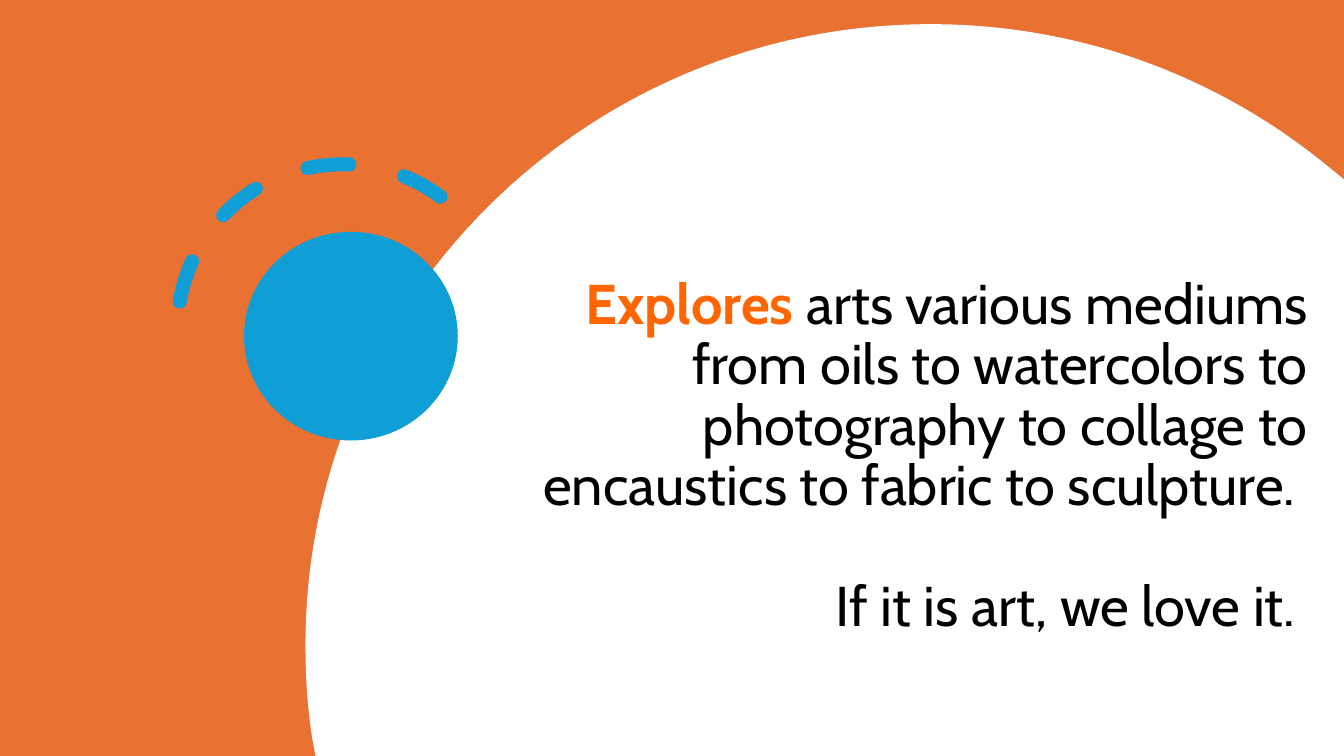
from lxml import etree
from pptx import Presentation
from pptx.dml.color import RGBColor
from pptx.enum.dml import MSO_LINE
from pptx.enum.shapes import MSO_SHAPE
from pptx.enum.text import MSO_ANCHOR, PP_ALIGN
from pptx.oxml.ns import qn
from pptx.util import Inches, Pt

COLORS = {
    "background": "E97132",
    "disc": "FFFFFF",
    "blue": "0F9ED5",
    "accent": "FF6600",
    "text": "000000",
}
WIDTH, HEIGHT = 13.33, 7.5


def rgb(name):
    return RGBColor.from_string(COLORS[name])


def paint(shape, name):
    """Give the shape a flat fill without outline or shadow."""
    shape.shadow.inherit = False
    shape.fill.solid()
    shape.fill.fore_color.rgb = rgb(name)
    shape.line.fill.background()


prs = Presentation()
prs.slide_width, prs.slide_height = Inches(WIDTH), Inches(HEIGHT)
s = prs.slides.add_slide(prs.slide_layouts[5])

background = s.shapes.add_shape(
    MSO_SHAPE.RECTANGLE, 0, 0, prs.slide_width, prs.slide_height)
paint(background, "background")

# Large disc, cut off by the right and bottom edges of the slide.
# A step of three points is a curve, a step of one point is a line.
disc_steps = [
    [(10.73, 0.24), (12.1, 0.77), (13.17, 1.65)],
    [(WIDTH, 1.78)],
    [(WIDTH, HEIGHT)],
    [(3.13, HEIGHT)],
    [(3.1, 7.34)],
    [(3.05, 7.03), (3.03, 6.72), (3.03, 6.4)],
    [(3.03, 3), (5.81, 0.24), (9.23, 0.24)],
]
builder = s.shapes.build_freeform(Inches(9.23), Inches(0.24))
builder.add_line_segments(
    [(Inches(x), Inches(y)) for step in disc_steps for x, y in step], close=True)
disc = builder.convert_to_shape()
paint(disc, "disc")
segments = iter(list(disc._element.iter(qn("a:lnTo"))))
for step in disc_steps:
    parts = [next(segments) for _ in step]
    if len(parts) == 3:
        curve = etree.Element(qn("a:cubicBezTo"))
        parts[0].addprevious(curve)
        for part in parts:
            curve.append(part[0])
            part.getparent().remove(part)

dot = s.shapes.add_shape(
    MSO_SHAPE.OVAL, Inches(2.42), Inches(2.3), Inches(2.12), Inches(2.07))
paint(dot, "blue")

arc = s.shapes.add_shape(
    MSO_SHAPE.ARC, Inches(1.76), Inches(1.63), Inches(3.27), Inches(3.27))
arc.shadow.inherit = False
arc.rotation = 308.7
arc.adjustments[0], arc.adjustments[1] = 144.56, 2.28
arc.fill.background()
arc.line.color.rgb = rgb("blue")
arc.line.width = Pt(10)
arc.line.dash_style = MSO_LINE.DASH
arc.line._ln.set("cap", "rnd")

title = s.shapes.title
s.shapes._spTree.append(title._element)  # bring to front
title.left, title.top = Inches(4.71), Inches(3.38)
title.width, title.height = Inches(8.36), Inches(3.01)
tf = title.text_frame
tf.word_wrap = True
tf.vertical_anchor = MSO_ANCHOR.BOTTOM

p = tf.paragraphs[0]
p.text = ("Explores \varts various mediums from oils to watercolors to photography "
          "to collage to encaustics to fabric to sculpture. "
          "\v\vIf it is art, we love it. ").replace("\v", "", 1)
p.text = ""
p.alignment = PP_ALIGN.RIGHT
p.line_spacing = 0.9
runs = [
    ("Explores ", "accent", 0),
    ("arts various mediums from oils to watercolors to photography "
     "to collage to encaustics to fabric to sculpture. ", "text", 2),
    ("If it is art, we love it. ", "text", 0),
]
for text, color, breaks in runs:
    r = p.add_run()
    r.text = text
    r.font.name = "Cabin"
    r.font.size = Pt(40)
    r.font.bold = color == "accent"
    r.font.color.rgb = rgb(color)
    for _ in range(breaks):
        p.add_line_break()
        line_break = p._p.findall(qn("a:br"))[-1]
        etree.SubElement(line_break, qn("a:rPr"), sz="4000")
        etree.SubElement(line_break[0], qn("a:latin"), typeface="Cabin")

prs.save("out.pptx")
